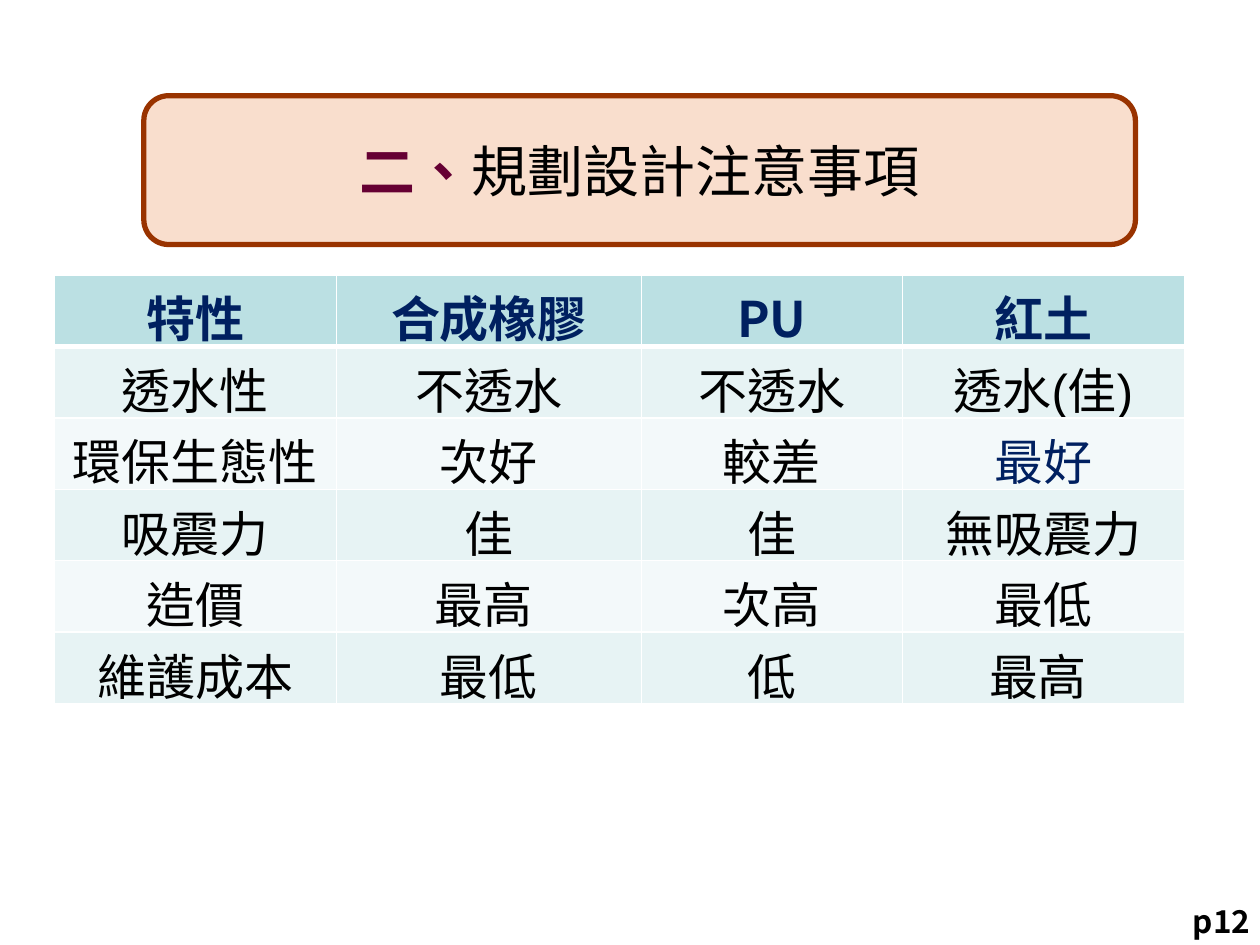
from dataclasses import dataclass
from lxml import etree
from pptx import Presentation
from pptx.dml.color import RGBColor
from pptx.enum.lang import MSO_LANGUAGE_ID
from pptx.enum.shapes import MSO_SHAPE
from pptx.enum.text import MSO_ANCHOR, PP_ALIGN
from pptx.oxml.ns import qn
from pptx.util import Cm, Pt

ROUND = MSO_SHAPE.ROUNDED_RECTANGLE
MID = MSO_ANCHOR.MIDDLE
MID_ALIGN = PP_ALIGN.CENTER
LANG = MSO_LANGUAGE_ID.TRADITIONAL_CHINESE
SANS = "Noto Sans CJK SC"
INK = {
    "black": "000000", "navy": "002060", "plum": "660033",
    "rust": "993300", "peach": "F9DECD", "white": "FFFFFF",
    "head": "BBE0E3", "odd": "E7F3F4", "even": "F3F9FA",
}
WIDTHS = (5.69, 6.15, 5.26, 5.69)
ROWS = (
    ("特性", "合成橡膠", "PU", "紅土"),
    ("透水性", "不透水", "不透水", "透水(佳)"),
    ("環保生態性", "次好", "較差", "最好"),
    ("吸震力", "佳", "佳", "無吸震力"),
    ("造價", "最高 ", "次高", "最低"),
    ("維護成本", "最低", "低", "最高 "),
)


@dataclass
class Span:
    text: str
    size: int
    color: str = "black"
    bold: bool = False
    face: str = SANS


def tint(name: str) -> RGBColor:
    return RGBColor.from_string(INK[name])


def write(para, span: Span) -> None:
    run = para.add_run()
    run.text = span.text
    form = {"size": Pt(span.size), "bold": span.bold, "name": span.face,
            "language_id": LANG}
    for key, value in form.items():
        setattr(run.font, key, value)
    run.font.color.rgb = tint(span.color)
    etree.SubElement(run.font._element, qn("a:ea"), typeface=SANS)


def edge(cell, sides: dict[str, int]) -> None:
    props = cell._tc.get_or_add_tcPr()
    for spot, (side, width) in enumerate(sides.items()):
        line = etree.Element(qn(f"a:ln{side}"), w=str(Pt(width)))
        fill = etree.SubElement(line, qn("a:solidFill"))
        etree.SubElement(fill, qn("a:srgbClr"), val=INK["white"])
        props.insert(spot, line)


def banner(slide) -> None:
    box = slide.shapes.add_shape(ROUND, Cm(2.9), Cm(1.93), Cm(19.99), Cm(3))
    box.shadow.inherit = False
    box.fill.solid()
    box.fill.fore_color.rgb = tint("peach")
    box.line.color.rgb = tint("rust")
    box.line.width = Pt(3)
    box.text_frame.vertical_anchor = MID
    para = box.text_frame.paragraphs[0]
    para.alignment = MID_ALIGN
    write(para, Span("二、", 32, "plum", True))
    write(para, Span("規劃設計注意事項", 32))


def grid(slide) -> None:
    frame = slide.shapes.add_table(len(ROWS), len(WIDTHS), Cm(1.09), Cm(5.54),
                                   Cm(sum(WIDTHS)), Cm(8.64))
    table = frame.table
    for col, width in zip(table.columns, WIDTHS):
        col.width = Cm(width)
    for row in table.rows:
        row.height = Cm(1.04)
    frame.height = Cm(8.64)
    for r, texts in enumerate(ROWS):
        top = r == 0
        band = "head" if top else "odd" if r % 2 else "even"
        for c, text in enumerate(texts):
            cell = table.cell(r, c)
            cell.fill.solid()
            cell.fill.fore_color.rgb = tint(band)
            edge(cell, {"L": 1, "R": 1, "T": 3 if r == 1 else 1,
                        "B": 3 if top else 1})
            para = cell.text_frame.paragraphs[0]
            para.alignment = MID_ALIGN
            color = "navy" if top or text == "最好" else "black"
            face = SANS if top and c else "Arial"
            write(para, Span(text, 28, color, top, face))


def page(slide) -> None:
    box = slide.shapes.add_textbox(Cm(23.8), Cm(18.06), Cm(1.78), Cm(1.02))
    box.text_frame.word_wrap = False
    write(box.text_frame.paragraphs[0], Span("p12", 18, bold=True))


def main() -> None:
    deck = Presentation()
    deck.slide_width, deck.slide_height = Cm(25.4), Cm(19.05)
    slide = deck.slides.add_slide(deck.slide_layouts[6])
    page(slide)
    banner(slide)
    grid(slide)
    deck.save("out.pptx")


if __name__ == "__main__":
    main()
